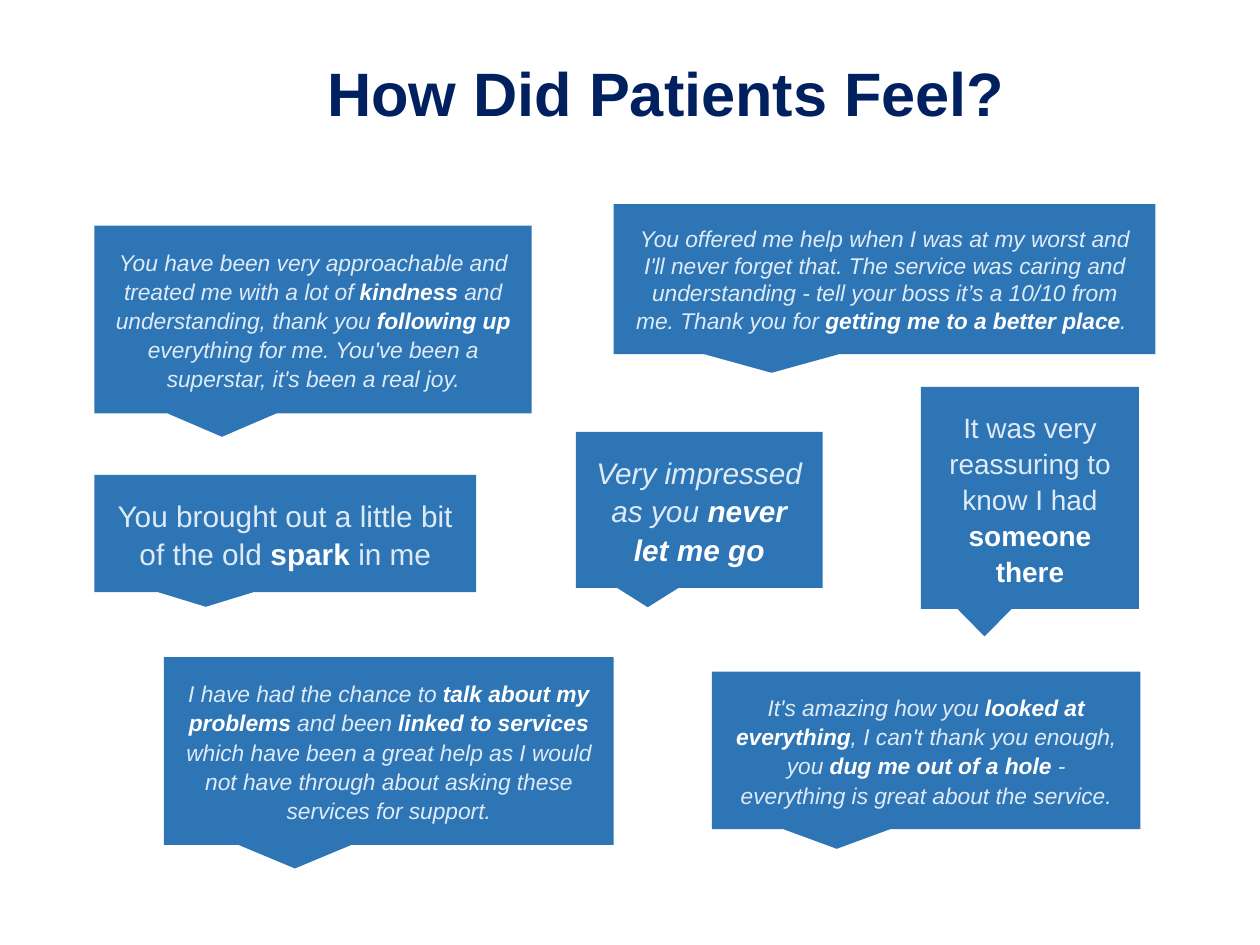
"""Build the slide of patient quotes in speech callouts."""
from dataclasses import dataclass

import pptx
import pptx.dml.color
import pptx.enum.shapes
import pptx.enum.text
import pptx.util

WIDTH, HEIGHT = pptx.util.Inches(10), pptx.util.Inches(7.5)
COLORS = {"title": "002060", "callout": "2E75B6", "quote": "DEEBF7", "emphasis": "FFFFFF"}
EMPHASIS_MARK = "*"


@dataclass(frozen=True)
class Box:
    """Position and size as percentages of the slide."""
    left: float
    top: float
    width: float
    height: float

    def lengths(self) -> tuple[int, int, int, int]:
        return (int(WIDTH * self.left / 100), int(HEIGHT * self.top / 100),
                int(WIDTH * self.width / 100), int(HEIGHT * self.height / 100))


@dataclass(frozen=True)
class Quote:
    """A quote whose emphasised words stand between marks."""
    box: Box
    text: str
    size: int = 13
    italic: bool = True
    line_spacing: float = 1.07


TITLE_BOX = Box(25, 5.2, 71.7, 9.47)
QUOTES = (
    Quote(Box(7.5, 23.87, 34.7, 19.87),
          "You have been very approachable and treated me with a lot of *kindness *and "
          "understanding, thank you *following up *everything for me. You've been a "
          "superstar, it's been a real joy."),
    Quote(Box(48.7, 21.6, 43, 15.87),
          "You offered me help when I was at my worst and I'll never forget that. The "
          "service was caring and understanding - tell your boss it’s a 10/10 from me. "
          "Thank you for *getting me to a better place*. ", line_spacing=1.0),
    Quote(Box(56.5, 71.07, 34, 16.67),
          "It's amazing how you *looked at everything*, I can't thank you enough, you "
          "*dug me out of a hole *- everything is great about the service."),
    Quote(Box(13, 69.55, 35.7, 19.87),
          "I have had the chance to *talk about my problems* and been *linked to services "
          "*which have been a great help as I would not have through about asking these "
          "services for support."),
    Quote(Box(45.7, 45.7, 19.6, 16.5),
          "Very impressed as you *never let me go*", size=17),
    Quote(Box(7.5, 50.27, 30.3, 12.4),
          "You brought out a little bit of the old *spark* in me", size=17, italic=False),
    Quote(Box(73.1, 40.95, 17.3, 23.47),
          "It was very reassuring to know I had *someone there*", size=16, italic=False),
)


def add_text(paragraph, text: str, *, size: int, color: str,
             bold: bool = False, italic: bool = False) -> None:
    run = paragraph.add_run()
    run.text = text
    run.font.name = "Arial"
    run.font.size = pptx.util.Pt(size)
    run.font.bold = bold
    run.font.italic = italic
    run.font.color.rgb = pptx.dml.color.RGBColor.from_string(COLORS[color])


def add_title(slide, text: str) -> None:
    shape = slide.shapes.add_textbox(*TITLE_BOX.lengths())
    shape.text_frame.word_wrap = True
    add_text(shape.text_frame.paragraphs[0], text, size=35, color="title", bold=True)


def add_quote(slide, quote: Quote) -> None:
    shape = slide.shapes.add_shape(
        pptx.enum.shapes.MSO_SHAPE.RECTANGULAR_CALLOUT, *quote.box.lengths())
    shape.shadow.inherit = False
    shape.fill.solid()
    shape.fill.fore_color.rgb = pptx.dml.color.RGBColor.from_string(COLORS["callout"])
    shape.line.fill.background()

    frame = shape.text_frame
    frame.word_wrap = True
    frame.auto_size = pptx.enum.text.MSO_AUTO_SIZE.SHAPE_TO_FIT_TEXT
    frame.vertical_anchor = pptx.enum.text.MSO_ANCHOR.MIDDLE
    for side in ("left", "top", "right", "bottom"):
        setattr(frame, f"margin_{side}", pptx.util.Inches(0.16))

    paragraph = frame.paragraphs[0]
    paragraph.alignment = pptx.enum.text.PP_ALIGN.CENTER
    paragraph.line_spacing = quote.line_spacing
    for index, part in enumerate(quote.text.split(EMPHASIS_MARK)):
        emphasised = index % 2 == 1
        if part:
            add_text(paragraph, part, size=quote.size, italic=quote.italic, bold=emphasised,
                     color="emphasis" if emphasised else "quote")


def main() -> None:
    presentation = pptx.Presentation()
    presentation.slide_width, presentation.slide_height = WIDTH, HEIGHT
    slide = presentation.slides.add_slide(presentation.slide_layouts[6])
    add_title(slide, "How Did Patients Feel?")
    for quote in QUOTES:
        add_quote(slide, quote)
    presentation.save("out.pptx")


if __name__ == "__main__":
    main()
